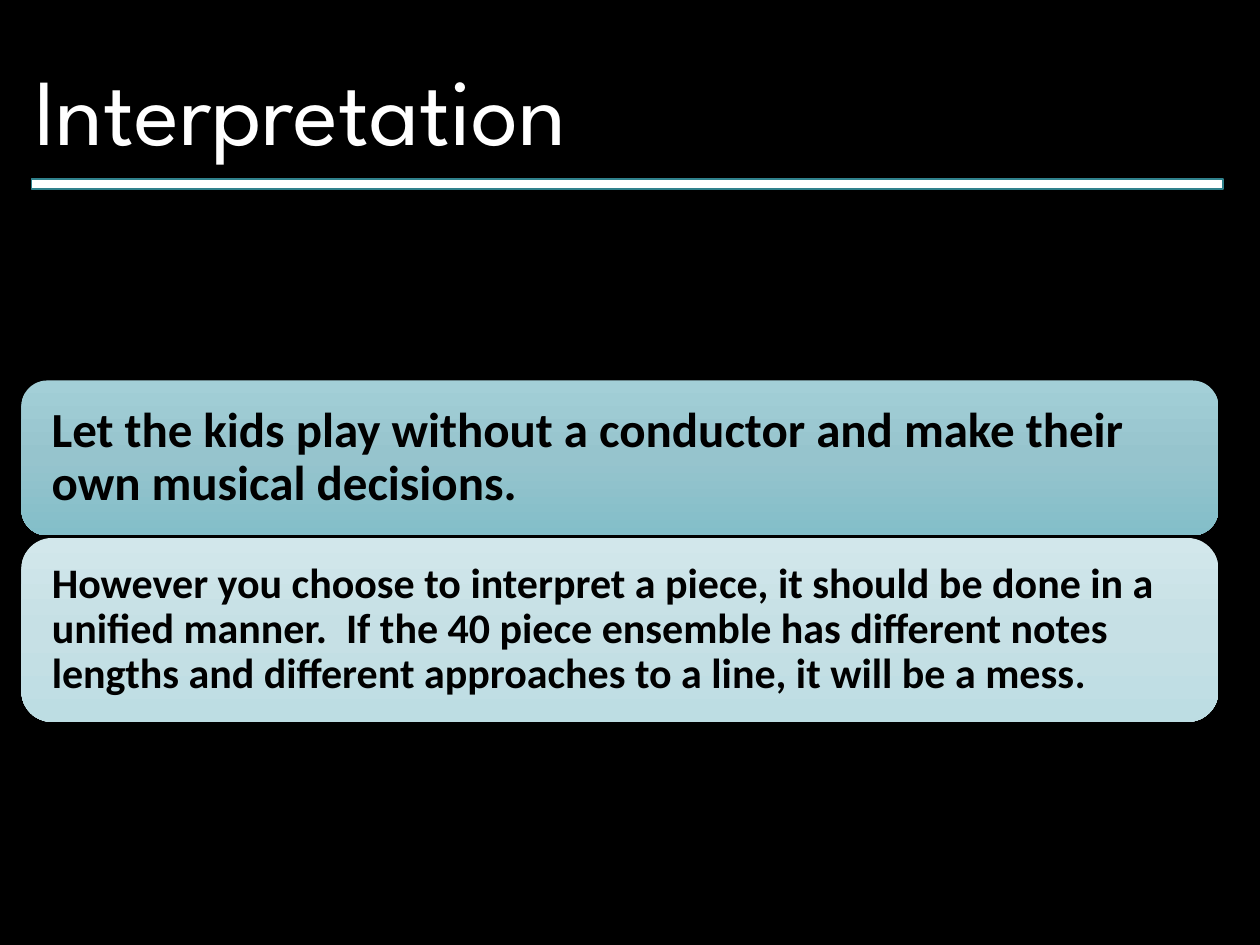
from copy import deepcopy
from dataclasses import dataclass

from pptx import Presentation
from pptx.dml.color import RGBColor
from pptx.enum.shapes import MSO_SHAPE
from pptx.enum.text import MSO_ANCHOR, PP_ALIGN
from pptx.oxml.ns import qn
from pptx.util import Inches, Pt

WIDE, HIGH = 10, 7.5
LEFT = 0.17


@dataclass
class Run:
    text: str
    size: float


@dataclass
class Card:
    top: float
    height: float
    inset: float
    stops: tuple[str, str, str]
    runs: list[Run]


CARDS = [
    Card(3.02, 1.23, 0.18, ("A3CFD7", "96C4CD", "83BEC9"), [
        Run("Let the kids play without a conductor and make their own musical decisions.", 28),
    ]),
    Card(4.27, 1.46, 0.17, ("D2E7EB", "C6E0E5", "BDDDE3"), [
        Run("However you choose to interpret a piece, it should be done in a unified manner.  "
            "If the 40 piece ensemble has different notes lengths and different approaches "
            "to a line, it will be a mess", 24),
        Run(".", 23),
    ]),
]


def hue(code: str) -> RGBColor:
    return RGBColor.from_string(code)


def place(shape, left: float, top: float, width: float, height: float) -> None:
    shape.left, shape.top = Inches(left), Inches(top)
    shape.width, shape.height = Inches(width), Inches(height)


def write(shape, runs: list[Run], face: str, code: str, bold: bool) -> None:
    frame = shape.text_frame
    frame.word_wrap = True
    frame.vertical_anchor = MSO_ANCHOR.MIDDLE
    para = frame.paragraphs[0]
    para.alignment = PP_ALIGN.LEFT
    para.line_spacing = 0.9
    for item in runs:
        run = para.add_run()
        run.text = item.text
        run.font.name = face
        run.font.size = Pt(item.size)
        run.font.bold = bold
        run.font.color.rgb = hue(code)


def shade(shape, codes: tuple[str, ...]) -> None:
    fill = shape.fill
    fill.gradient()
    fill.gradient_angle = 270
    stops = shape._element.spPr.find(qn("a:gradFill")).find(qn("a:gsLst"))
    stops.insert(1, deepcopy(stops[0]))
    for rank, (stop, code) in enumerate(zip(fill.gradient_stops, codes)):
        stop.position = rank / (len(codes) - 1)
        stop.color.rgb = hue(code)


def draw(slide, card: Card) -> None:
    shape = slide.shapes.add_shape(MSO_SHAPE.ROUNDED_RECTANGLE, 0, 0, 0, 0)
    place(shape, LEFT, card.top, 0.95 * WIDE, card.height)
    shape.shadow.inherit = False
    shape.line.fill.background()
    shade(shape, card.stops)
    frame = shape.text_frame
    frame.margin_left = frame.margin_right = Inches(card.inset)
    frame.margin_top = frame.margin_bottom = Inches(card.inset)
    write(shape, card.runs, "Calibri", "000000", True)


def rule(slide) -> None:
    bar = slide.shapes.add_shape(MSO_SHAPE.RECTANGLE, 0, 0, 0, 0)
    place(bar, 0.25, 1.42, 9.46, 0.08)
    bar.shadow.inherit = False
    bar.fill.solid()
    bar.fill.fore_color.rgb = hue("FFFFFF")
    bar.line.color.rgb = hue("30818C")
    bar.line.width = Pt(1)


def main() -> None:
    deck = Presentation()
    deck.slide_width, deck.slide_height = Inches(WIDE), Inches(HIGH)
    slide = deck.slides.add_slide(deck.slide_layouts[5])
    back = slide.background.fill
    back.solid()
    back.fore_color.rgb = hue("000000")
    title = slide.shapes.title
    place(title, LEFT, 0.25, WIDE - 2 * LEFT, 1.33)
    write(title, [Run("Interpretation", 54)], "League Spartan", "FFFFFF", False)
    for card in CARDS:
        draw(slide, card)
    rule(slide)
    deck.save("out.pptx")


if __name__ == "__main__":
    main()
